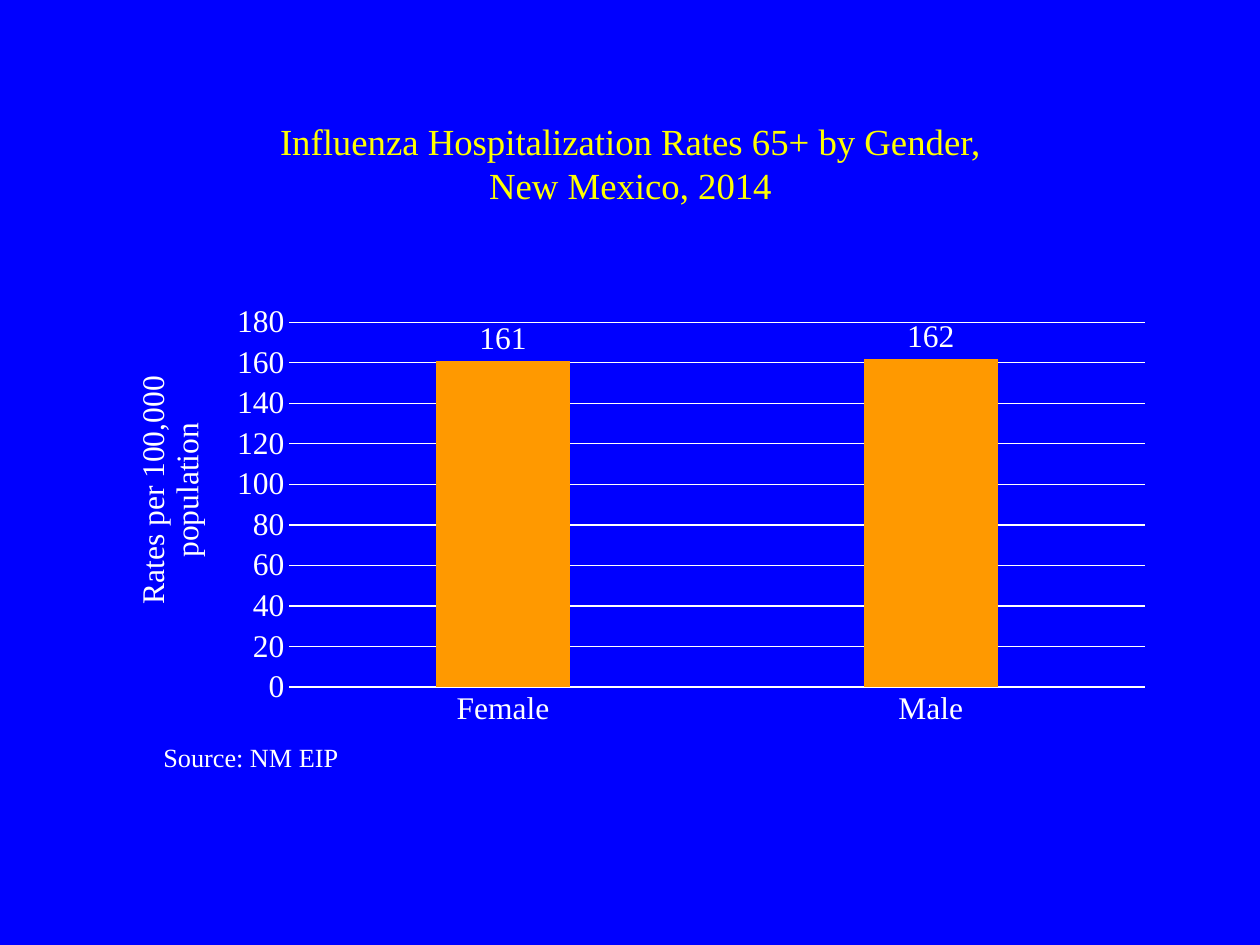
"""Build a slide with a column chart of influenza hospitalization rates by gender."""
from copy import deepcopy
from lxml.etree import SubElement
from pptx import Presentation
from pptx.chart.data import CategoryChartData
from pptx.dml.color import RGBColor
from pptx.enum.chart import XL_CHART_TYPE, XL_LABEL_POSITION, XL_TICK_MARK
from pptx.enum.text import MSO_ANCHOR, PP_ALIGN
from pptx.oxml.ns import qn
from pptx.util import Emu, Pt

SCALE = 914400 / 126
FONT = "Times New Roman"
COLORS = {"back": "0000FF", "title": "FFFF00", "text": "FFFFFF", "bar": "FF9900"}


def write(frame, text, size=18, color="text", align=None):
    para = frame.paragraphs[0]
    para.text = text
    para.alignment = align
    for run in para.runs:
        run.font.name = FONT
        run.font.size = Pt(size)
        run.font.bold = False
        run.font.color.rgb = RGBColor.from_string(COLORS[color])
    for gap in para._p.findall(qn("a:br")):
        gap.insert(0, deepcopy(para.runs[0]._r.rPr))


def place(node, **spots):
    for old in node.findall(qn("c:layout")):
        node.remove(old)
    layout = SubElement(node, qn("c:layout"))
    manual = SubElement(layout, qn("c:manualLayout"))
    for tag, val in spots.items():
        SubElement(manual, qn("c:" + tag)).set("val", str(val))
    return layout


deck = Presentation()
deck.slide_width, deck.slide_height = Emu(int(1260 * SCALE)), Emu(int(945 * SCALE))
slide = deck.slides.add_slide(deck.slide_layouts[5])
slide.background.fill.solid()
slide.background.fill.fore_color.rgb = RGBColor.from_string(COLORS["back"])
white = RGBColor.from_string(COLORS["text"])

title = slide.shapes.title
title.left, title.top, title.width, title.height = [
    Emu(int(n * SCALE)) for n in (95, 84, 1071, 158)]
title.text_frame.vertical_anchor = MSO_ANCHOR.MIDDLE
write(title.text_frame, "Influenza Hospitalization Rates 65+ by Gender,\nNew Mexico, 2014",
      size=21, color="title", align=PP_ALIGN.CENTER)

data = CategoryChartData(number_format="0")
data.categories = ["Female", "Male"]
data.add_series("Series 1", [161, 162])
box = [Emu(int(n * SCALE)) for n in (106, 296, 1060, 438)]
chart = slide.shapes.add_chart(XL_CHART_TYPE.COLUMN_CLUSTERED, *box, data).chart
chart.has_legend = False
chart.has_title = False
chart.font.name = FONT
chart.font.size = Pt(18)
chart.font.color.rgb = white

plot = chart.plots[0]
plot.vary_by_categories = False
plot.gap_width = 219
plot.overlap = -27
bars = plot.series[0]
bars.format.fill.solid()
bars.format.fill.fore_color.rgb = RGBColor.from_string(COLORS["bar"])

plot.has_data_labels = True
tags = plot.data_labels
tags.show_value = True
tags.position = XL_LABEL_POSITION.OUTSIDE_END
tags.number_format = "0"
tags.number_format_is_linked = False

cats, vals = chart.category_axis, chart.value_axis
for axis in (cats, vals):
    axis.major_tick_mark = axis.minor_tick_mark = XL_TICK_MARK.NONE
vals.minimum_scale, vals.maximum_scale, vals.major_unit = 0, 180, 20
vals.tick_labels.number_format = "0"
vals.tick_labels.number_format_is_linked = False
vals.format.line.fill.background()
vals.has_major_gridlines = True
for line in (cats.format.line, vals.major_gridlines.format.line):
    line.color.rgb = white
    line.width = Pt(0.75)
write(vals.axis_title.text_frame, "Rates per 100,000 population")

area = chart._chartSpace.chart.plotArea
area.insert(0, place(area, layoutTarget="inner", xMode="edge", yMode="edge",
                     x=0.173, y=0.06, w=0.807, h=0.833))
head = vals.axis_title._element
head.insert(1, place(head, xMode="edge", yMode="edge", x=0.02, y=0.17))

note = slide.shapes.add_textbox(*[Emu(int(n * SCALE)) for n in (151, 735, 973, 44)])
note.text_frame.word_wrap = True
write(note.text_frame, "Source: NM EIP", size=15)

deck.save("out.pptx")
